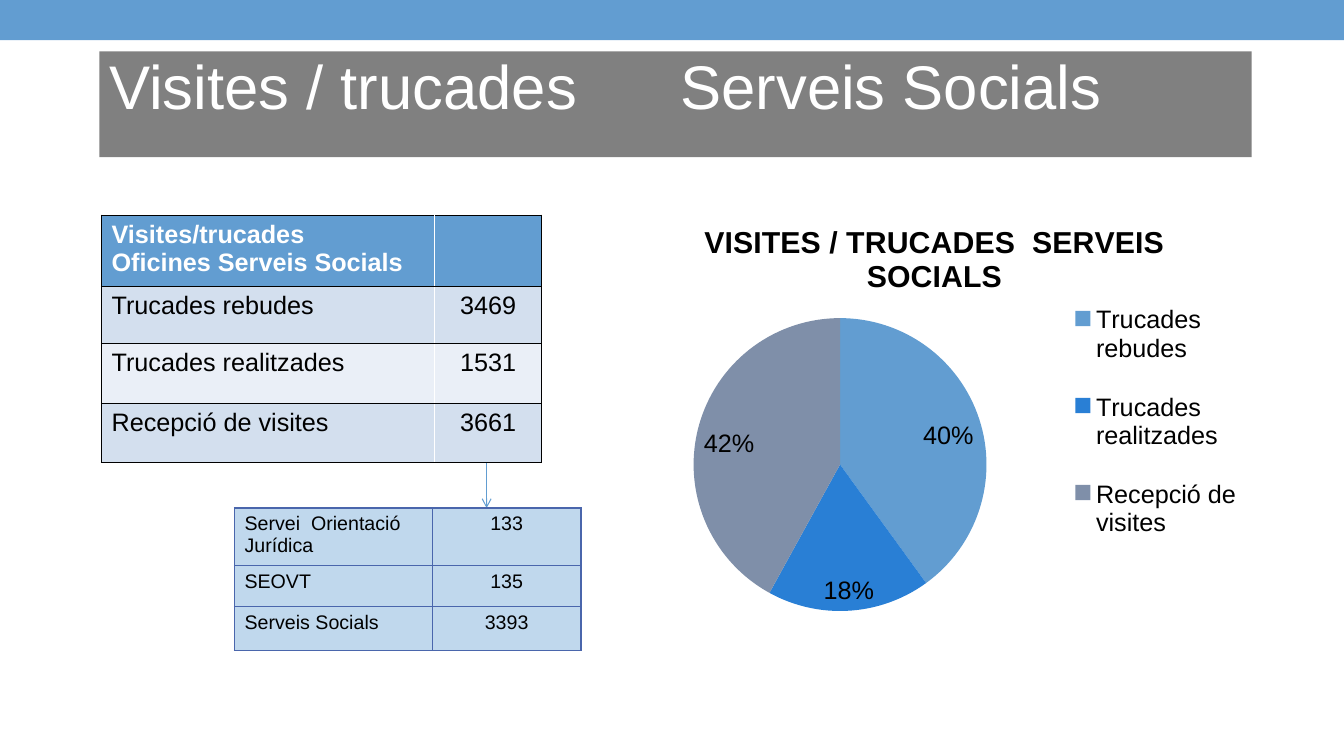
"""Build the slide on visits and calls to the Serveis Socials offices."""
from lxml.etree import SubElement
from pptx import Presentation
from pptx.chart.data import CategoryChartData
from pptx.dml.color import RGBColor
from pptx.enum.chart import XL_CHART_TYPE, XL_LABEL_POSITION, XL_LEGEND_POSITION
from pptx.enum.shapes import MSO_CONNECTOR, MSO_SHAPE
from pptx.enum.text import MSO_ANCHOR, PP_ALIGN
from pptx.oxml import parse_xml
from pptx.oxml.ns import nsdecls, qn
from pptx.util import Pt

BLUE, BLACK, WHITE, NAVY = "629DD1", "000000", "FFFFFF", "4A66AC"


def paint(target, color):
    target.solid()
    target.fore_color.rgb = RGBColor.from_string(color)


def style(font, size, color, bold=False):
    font.name, font.size, font.bold = "Arial", Pt(size), bold
    font.color.rgb = RGBColor.from_string(color)


prs = Presentation()
prs.slide_width, prs.slide_height = Pt(960), Pt(540)
slide = prs.slides.add_slide(prs.slide_layouts[6])
shapes = slide.shapes

top_band = shapes.add_shape(MSO_SHAPE.RECTANGLE, 0, 0, Pt(960), Pt(28.8))
heading = shapes.add_shape(MSO_SHAPE.RECTANGLE, Pt(71), Pt(36.7), Pt(823), Pt(75.6))
for bar, color in ((top_band, BLUE), (heading, "808080")):
    bar.shadow.inherit = False
    paint(bar.fill, color)
    bar.line.fill.background()

heading.text_frame.vertical_anchor = MSO_ANCHOR.TOP
title = heading.text_frame.paragraphs[0]
title.text = "Visites / trucades\tServeis Socials"
title.alignment = PP_ALIGN.LEFT
title.line_spacing = 0.9
style(title.font, 44, WHITE)
tabs = SubElement(title._p.get_or_add_pPr(), qn("a:tabLst"))
SubElement(tabs, qn("a:tab"), pos=str(Pt(408)), algn="l")

share_data = CategoryChartData()
share_data.categories = ["Trucades rebudes", "Trucades realitzades", "Recepció de visites"]
share_data.add_series("Series 1", (40, 18, 42))
pie = shapes.add_chart(
    XL_CHART_TYPE.PIE, Pt(435), Pt(144.7), Pt(465), Pt(325.5), share_data).chart
style(pie.font, 18, BLACK)
pie.has_title = True
pie.chart_title.text_frame.text = "VISITES / TRUCADES  SERVEIS SOCIALS"
style(pie.chart_title.text_frame.paragraphs[0].font, 21.6, BLACK, True)
pie.chart_title.include_in_layout = False
pie.has_legend = True
pie.legend.position = XL_LEGEND_POSITION.RIGHT
pie.legend.include_in_layout = False
style(pie.legend.font, 18, BLACK)
plot = pie.plots[0]
plot.vary_by_categories = True
for index, color in enumerate((BLUE, "297FD5", "7F8FA9")):
    paint(plot.series[0].points[index].format.fill, color)
plot.has_data_labels = True
labels = plot.data_labels
labels.show_percentage, labels.show_value = True, False
labels.number_format, labels.number_format_is_linked = "0%", False
labels.position = XL_LABEL_POSITION.INSIDE_END
style(labels.font, 18, BLACK)

plot_area = pie._chartSpace.chart.plotArea
legend_xml = pie.legend._element
for old in plot_area.findall(qn("c:layout")) + legend_xml.findall(qn("c:layout")):
    old.getparent().remove(old)
for parent, place, box in ((plot_area, 0, (0.13, 0.25, 0.45, 0.65)),
                           (legend_xml, 1, (0.7, 0.16, 0.28, 0.64))):
    target = '<c:layoutTarget val="inner"/>' if parent is plot_area else ""
    modes = '<c:xMode val="edge"/><c:yMode val="edge"/>'
    sizes = "".join(f'<c:{key} val="{value}"/>' for key, value in zip("xywh", box))
    parent.insert(place, parse_xml(
        f'<c:layout {nsdecls("c")}><c:manualLayout>{target}{modes}{sizes}'
        '</c:manualLayout></c:layout>'))

arrow = shapes.add_connector(MSO_CONNECTOR.STRAIGHT, Pt(347.6), Pt(304.6), Pt(347.6), Pt(362.9))
arrow.line.color.rgb = RGBColor.from_string(BLUE)
arrow.line.width = Pt(0.75)
SubElement(arrow.line._get_or_add_ln(), qn("a:tailEnd"), type="arrow")
SubElement(arrow._element.spPr, qn("a:effectLst"))

offices = [("Visites/trucades\nOficines Serveis Socials", ""), ("Trucades rebudes", "3469"),
           ("Trucades realitzades", "1531"), ("Recepció de visites", "3661")]
services = [("Servei  Orientació Jurídica", "133"), ("SEOVT", "135"), ("Serveis Socials", "3393")]
tables = [
    (services, (167.5, 362.9), (141.4, 106.1), (41, 29.3, 31.5), 14,
     ["C0D8ED"] * 3, NAVY, NAVY),
    (offices, (72.5, 153.8), (238, 76.3), (50.8, 40.8, 42.8, 42.2), 18,
     [BLUE, "D3DFEE", "EAEFF7", "D3DFEE"], BLACK, WHITE),
]
for rows, (left, top), widths, heights, size, fills, outer, middle in tables:
    table = shapes.add_table(len(rows), 2, Pt(left), Pt(top),
                             Pt(sum(widths)), Pt(sum(heights))).table
    table.horz_banding = False
    table.first_row = rows is offices
    for column, width in zip(table.columns, widths):
        column.width = Pt(width)
    for r, (texts, height, fill) in enumerate(zip(rows, heights, fills)):
        table.rows[r].height = Pt(height)
        is_header = fill == BLUE
        for c, text in enumerate(texts):
            cell = table.cell(r, c)
            cell.text = text
            for paragraph in cell.text_frame.paragraphs:
                paragraph.alignment = PP_ALIGN.CENTER if c else PP_ALIGN.LEFT
                style(paragraph.font, size, WHITE if is_header else BLACK, is_header)
            sides = {"L": middle if c else outer, "R": outer if c else middle,
                     "T": outer, "B": outer}
            for side, color in sides.items():
                edge = SubElement(cell._tc.get_or_add_tcPr(), qn(f"a:ln{side}"), w=str(Pt(1)))
                SubElement(SubElement(edge, qn("a:solidFill")), qn("a:srgbClr"), val=color)
            paint(cell.fill, fill)

prs.save("out.pptx")
